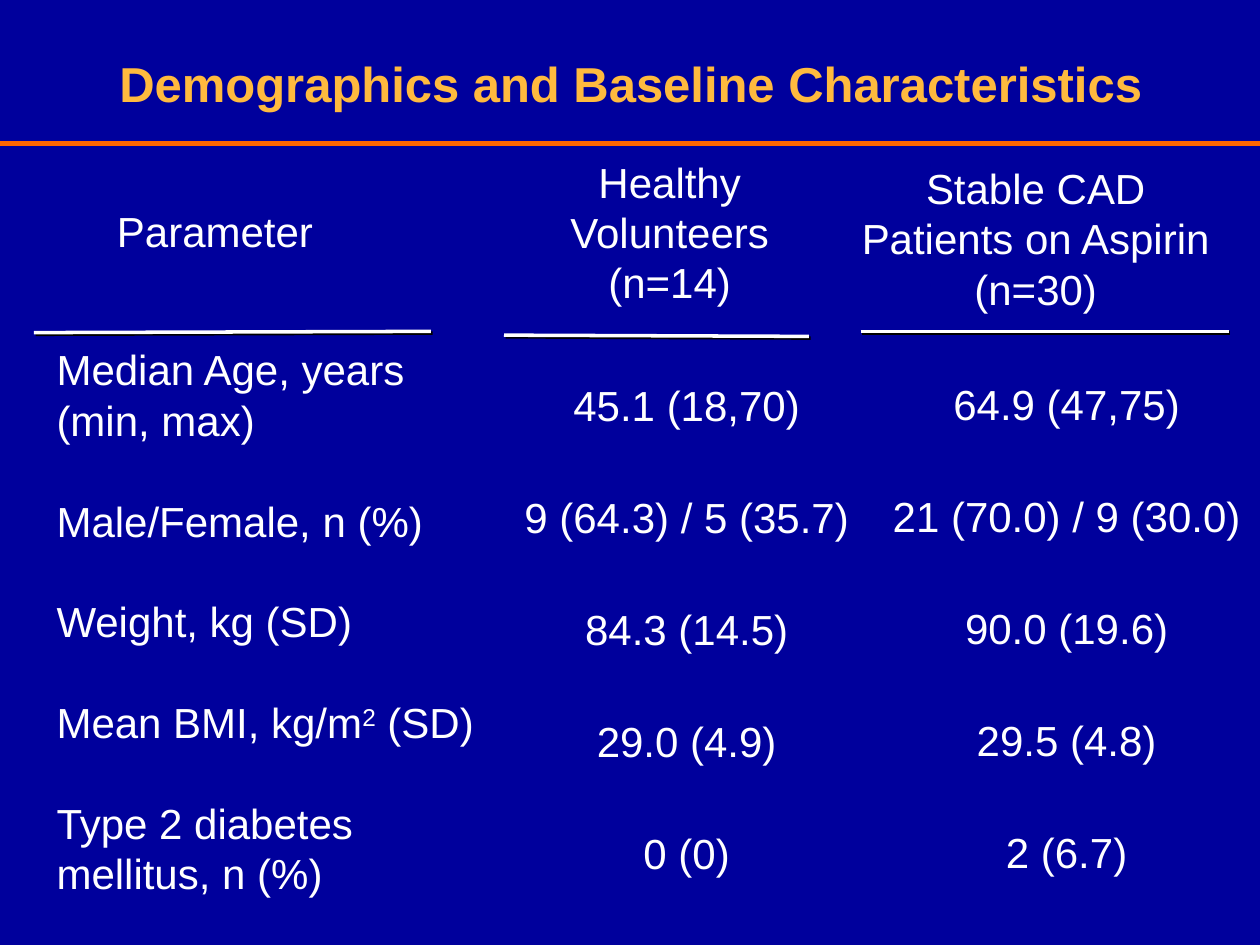
"""Build the demographics and baseline characteristics slide."""
from lxml.etree import SubElement
from pptx import Presentation
from pptx.dml.color import RGBColor
from pptx.enum.shapes import MSO_CONNECTOR as Connector
from pptx.enum.text import MSO_ANCHOR as Anchor, MSO_AUTO_SIZE as AutoSize, PP_ALIGN as Align
from pptx.oxml.ns import qn
from pptx.util import Inches, Pt

COLORS = {"background": "00009C", "title": "FFBA3E", "accent": "FF6600",
          "text": "FFFFFF", "shadow": "000000"}
TITLE = "Demographics and Baseline Characteristics"
SUPERSCRIPT = "2"
PARAMETERS = [["Median Age, years (min, max)"], ["Male/Female, n (%)"], ["Weight, kg (SD)"],
              ["Mean BMI, kg/m", SUPERSCRIPT, " (SD)"], ["Type 2 diabetes mellitus, n (%)"]]
HEALTHY = [["45.1 (18,70)"], ["9 (64.3) / 5 (35.7)"], ["84.3 (14.5)"], ["29.0 (4.9)"], ["0 (0)"]]
STABLE = [["64.9 (47,75)"], ["21 (70.0) / 9 (30.0)"], ["90.0 (19.6)"], ["29.5 (4.8)"], ["2 (6.7)"]]
LABEL_PITCH, VALUE_PITCH = 28.8, 32

COLUMNS = [
    {"heading": "Parameter", "heading_box": (0.83, 1.58, 2, 0.5), "heading_align": Align.LEFT,
     "rule": (0.27, 2.64, 3.42, 2.63), "rows": PARAMETERS, "rows_box": (0.35, 2.68, 3.58, 4.54),
     "rows_align": Align.LEFT, "pitch": LABEL_PITCH, "wrap": True},
    {"heading": "Healthy Volunteers (n=14)", "heading_box": (3.98, 1.19, 2.67, 1.31),
     "heading_align": Align.CENTER, "rule": (4, 2.66, 6.42, 2.67), "rows": HEALTHY,
     "rows_box": (4.05, 2.92, 2.8, 4.14), "rows_align": Align.CENTER,
     "pitch": VALUE_PITCH, "wrap": False},
    {"heading": "Stable CAD Patients on Aspirin (n=30)", "heading_box": (6.62, 1.24, 3.2, 1.31),
     "heading_align": Align.CENTER, "rule": (6.83, 2.63, 9.75, 2.63), "rows": STABLE,
     "rows_box": (6.97, 2.91, 2.99, 4.14), "rows_align": Align.CENTER,
     "pitch": VALUE_PITCH, "wrap": False},
]
BODY_FONT = {"name": "Arial", "size": Pt(24), "bold": False}
TITLE_FONT = {"name": "Arial", "size": Pt(28), "bold": True}


def apply(target, formats):
    for attribute, value in formats.items():
        setattr(target, attribute, value)


def style_font(font, formats, color):
    apply(font, formats)
    font.color.rgb = RGBColor.from_string(COLORS[color])


def add_text(slide, box, rows, align, pitch, wrap=True):
    frame = slide.shapes.add_textbox(*map(Inches, box)).text_frame
    apply(frame, {"word_wrap": wrap, "auto_size": AutoSize.NONE})
    for index, pieces in enumerate(rows):
        row = frame.add_paragraph() if index else frame.paragraphs[0]
        apply(row, {"alignment": align, "line_spacing": Pt(pitch),
                    "space_before": Pt(pitch if index else 0)})
        for piece in pieces:
            run = row.add_run()
            run.text = piece
            style_font(run.font, BODY_FONT, "text")
            if piece == SUPERSCRIPT:
                run._r.get_or_add_rPr().set("baseline", "30000")


def add_rule(slide, ends, color, width, shadow=False):
    rule = slide.shapes.add_connector(Connector.STRAIGHT, *map(Inches, ends))
    rule.line.color.rgb = RGBColor.from_string(COLORS[color])
    rule.line.width = Pt(width)
    effects = SubElement(rule._element.spPr, qn("a:effectLst"))
    if shadow:
        outer = SubElement(effects, qn("a:outerShdw"), dist=str(Pt(1.4)), dir="2700000",
                           algn="ctr", rotWithShape="0")
        SubElement(outer, qn("a:srgbClr"), val=COLORS["shadow"])


def add_title(slide):
    title = slide.shapes.title
    apply(title, dict(zip(("left", "top", "width", "height"),
                          map(Inches, (0.42, 0.36, 9.12, 0.6)))))
    frame = title.text_frame
    apply(frame, {"text": TITLE, "word_wrap": True, "auto_size": AutoSize.NONE,
                  "vertical_anchor": Anchor.TOP, "margin_left": Inches(0.1),
                  "margin_top": Inches(0.1), "margin_right": Inches(0.05),
                  "margin_bottom": Inches(0.05)})
    heading = frame.paragraphs[0]
    apply(heading, {"alignment": Align.CENTER, "line_spacing": 0.95})
    style_font(heading.runs[0].font, TITLE_FONT, "title")


def main():
    deck = Presentation()
    apply(deck, {"slide_width": Inches(10), "slide_height": Inches(7.5)})
    slide = deck.slides.add_slide(deck.slide_layouts[5])
    slide.background.fill.solid()
    slide.background.fill.fore_color.rgb = RGBColor.from_string(COLORS["background"])
    add_rule(slide, (0, 1.14, 10, 1.14), "accent", 3)
    add_title(slide)
    for column in COLUMNS:
        add_text(slide, column["heading_box"], [[column["heading"]]],
                 column["heading_align"], LABEL_PITCH)
        add_rule(slide, column["rule"], "text", 2, shadow=True)
        add_text(slide, column["rows_box"], column["rows"], column["rows_align"],
                 column["pitch"], column["wrap"])
    deck.save("out.pptx")


if __name__ == "__main__":
    main()
